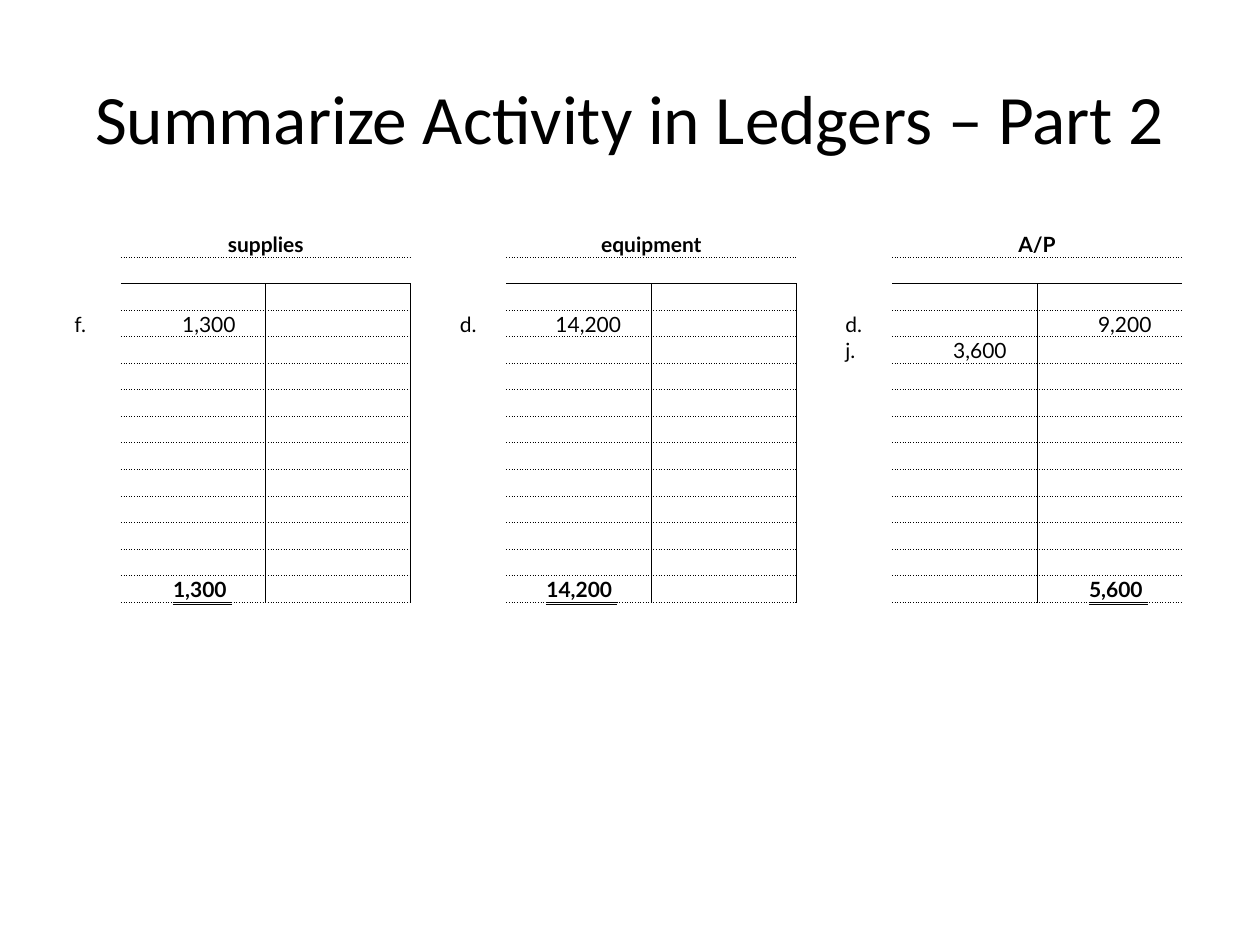
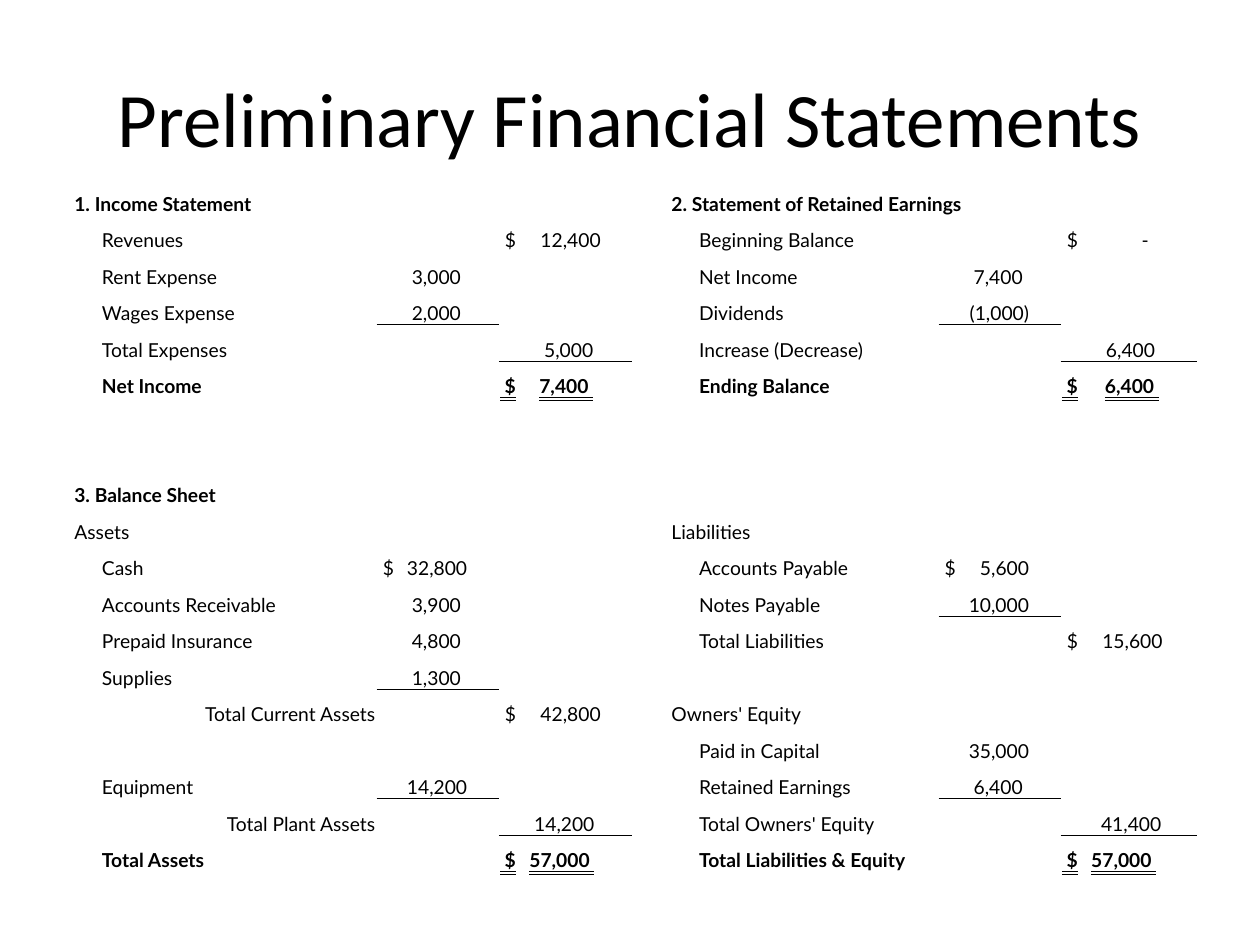
import lxml.etree
import pptx
import pptx.dml.color
import pptx.enum.text
import pptx.oxml.ns
import pptx.util

INK = "000000"
TITLE_FONT, BODY_FONT = "Calibri", "Lato"
PLAIN_TABLE = "{2D5ABB26-0587-4C30-8999-92F81FD0307C}"
SLIDE_WIDTH, SLIDE_HEIGHT = 10, 7.5
TITLE_BOX = (0.05, 0.04, 0.9, 1 / 6)
TABLE_LEFT = 0.58

TAG_WIDTH, SIDE_WIDTH, GAP_WIDTH = 0.38, 1.15, 0.38
ACCOUNT_COLUMNS = 4
LEDGER_ROWS = 14
ENTRY_STOP, TOTAL_STOP = 0.9, 0.87
ACCOUNTS = [
    ("supplies", [(3, "f.", 1, "1,300")], (1, "1,300")),
    ("equipment", [(3, "d.", 1, "14,200")], (1, "14,200")),
    ("A/P", [(3, "d.", 2, "9,200"), (4, "j.", 1, "3,600")], (2, "5,600")),
]

STATEMENT_WIDTHS = [0.22, 2.19, 0.97, 1.06, 0.3, 0.22, 1.91, 0.97, 1.08]
STATEMENT_ROWS = 19
LEFT_HEADINGS = [(0, "1. Income Statement", 2, True), (8, "3. Balance Sheet", 2, True),
                 (9, "Assets", 2, False)]
RIGHT_HEADINGS = [(0, "2. Statement of Retained Earnings", 3, True),
                  (9, "Liabilities", 2, False), (14, "Owners' Equity", 2, False)]
LEFT_LINES = [
    (1, "Revenues", "outer", " $\t12,400", 0.8),
    (2, "Rent Expense", "inner", "\t3,000", 0.66),
    (3, "Wages Expense", "inner rule", "\t2,000", 0.66),
    (4, "Total Expenses", "outer rule", "\t5,000", 0.74),
    (5, "Net Income", "outer total", " $\t7,400 ", 0.74),
    (10, "Cash", "inner", " $\t32,800", 0.71),
    (11, "Accounts Receivable", "inner", "\t3,900", 0.66),
    (12, "Prepaid Insurance", "inner", "\t4,800", 0.66),
    (13, "Supplies", "inner rule", "\t1,300", 0.66),
    (14, "Total Current Assets", "outer right", " $\t42,800", 0.8),
    (16, "Equipment", "inner rule", "\t14,200", 0.71),
    (17, "Total Plant Assets", "outer right rule", "\t14,200", 0.75),
    (18, "Total Assets", "outer total", " $\t57,000 ", 0.75),
]
RIGHT_LINES = [
    (1, "Beginning Balance", "outer", " $\t-", 0.69),
    (2, "Net Income", "inner", "\t7,400", 0.66),
    (3, "Dividends", "inner rule", "\t(1,000)", 0.71),
    (4, "Increase (Decrease)", "outer rule", "\t6,400", 0.74),
    (5, "Ending Balance", "outer total", " $\t6,400 ", 0.77),
    (10, "Accounts Payable", "inner", " $\t5,600", 0.71),
    (11, "Notes Payable", "inner rule", "\t10,000", 0.71),
    (12, "Total Liabilities", "outer", " $\t15,600", 0.8),
    (15, "Paid in Capital", "inner", "\t35,000", 0.71),
    (16, "Retained Earnings", "inner rule", "\t6,400", 0.66),
    (17, "Total Owners' Equity", "outer rule", "\t41,400", 0.79),
    (18, "Total Liabilities & Equity", "outer wide total", " $\t57,000 ", 0.75),
]


def colour(code):
    """Turn a hex string into a colour."""
    return pptx.dml.color.RGBColor.from_string(code)


def inches(value):
    """Turn inches into whole units."""
    return pptx.util.Inches(value)


def add_child(parent, tag, **attributes):
    """Append a drawing element to its parent."""
    return lxml.etree.SubElement(parent, pptx.oxml.ns.qn(tag), **attributes)


def style_font(font, name, size, bold=False):
    """Give a font its face, size, weight and ink."""
    font.name, font.size, font.bold = name, pptx.util.Pt(size), bold
    font.color.rgb = colour(INK)


def add_page(deck, title, size):
    """Add a title-only slide with a centred title."""
    page = deck.slides.add_slide(deck.slide_layouts[5])
    holder = page.shapes.title
    left, top, width, height = TITLE_BOX
    holder.left, holder.width = inches(left * SLIDE_WIDTH), inches(width * SLIDE_WIDTH)
    holder.top, holder.height = inches(top * SLIDE_HEIGHT), inches(height * SLIDE_HEIGHT)
    frame = holder.text_frame
    frame.text = title
    frame.auto_size = pptx.enum.text.MSO_AUTO_SIZE.NONE
    frame.vertical_anchor = pptx.enum.text.MSO_ANCHOR.MIDDLE
    para = frame.paragraphs[0]
    para.alignment = pptx.enum.text.PP_ALIGN.CENTER
    style_font(para.font, TITLE_FONT, size)
    return page


def add_grid(page, top, height, widths, row_count, size):
    """Add an unstyled table whose empty cells keep the small text size."""
    frame = page.shapes.add_table(row_count, len(widths), inches(TABLE_LEFT), inches(top),
                                  inches(sum(widths)), inches(height))
    table = frame.table
    table.first_row = table.horz_banding = False
    table._tbl.tblPr.find(pptx.oxml.ns.qn("a:tableStyleId")).text = PLAIN_TABLE
    for column, width in zip(table.columns, widths):
        column.width = inches(width)
    for row in table.rows:
        row.height = inches(height / row_count)
    for cell in table.iter_cells():
        cell.margin_left = cell.margin_right = cell.margin_top = inches(0.01)
        cell.margin_bottom = 0
        cell.vertical_anchor = pptx.enum.text.MSO_ANCHOR.BOTTOM
        cell.fill.background()
        para = cell.text_frame.paragraphs[0]
        style_font(para.font, BODY_FONT, size)
        add_child(para._p, "a:endParaRPr", sz=str(size * 100))
    return table


def write(cell, text, bold=False, align=None, stop=None, double=False):
    """Write a cell, with figures ending at a right tab stop."""
    para = cell.text_frame.paragraphs[0]
    para.add_run().text = text
    para.font.bold = bold
    para.alignment = align
    if double:
        para.font.underline = pptx.enum.text.MSO_TEXT_UNDERLINE_TYPE.DOUBLE_LINE
    if stop:
        stops = lxml.etree.Element(pptx.oxml.ns.qn("a:tabLst"))
        add_child(stops, "a:tab", pos=str(inches(stop)), algn="r")
        para._p.get_or_add_pPr().insert(0, stops)


def rule(cell, **edges):
    """Draw thin cell borders, given as side and dash in the order L, R, T, B."""
    properties = cell._tc.get_or_add_tcPr()
    for index, (side, dash) in enumerate(edges.items()):
        line = lxml.etree.Element(pptx.oxml.ns.qn("a:ln" + side), w=str(pptx.util.Pt(0.5)))
        add_child(add_child(line, "a:solidFill"), "a:srgbClr", val=INK)
        add_child(line, "a:prstDash", val=dash)
        properties.insert(index, line)


def add_account(table, first, name, entries, total):
    """Fill one T-account, starting at its tag column."""
    for side in (1, 2):
        stem = {"R" if side == 1 else "L": "solid"}
        for row in range(LEDGER_ROWS):
            cell = table.cell(row, first + side)
            if row == 0:
                rule(cell, B="sysDot")
            elif row == 1:
                rule(cell, T="sysDot", B="solid")
            else:
                rule(cell, **stem, T="solid" if row == 2 else "sysDot", B="sysDot")
    heading = table.cell(0, first + 1)
    heading.merge(table.cell(0, first + 2))
    write(heading, name, True, pptx.enum.text.PP_ALIGN.CENTER)
    for row, tag, side, amount in entries:
        write(table.cell(row, first), tag)
        write(table.cell(row, first + side), "\t" + amount, stop=ENTRY_STOP)
    side, amount = total
    write(table.cell(LEDGER_ROWS - 1, first + side), f"\t{amount} ", True,
          stop=TOTAL_STOP, double=True)


def add_statement(table, first, headings, lines):
    """Fill one half of the statements, starting at its indent column."""
    for row, text, span, bold in headings:
        cell = table.cell(row, first)
        cell.merge(table.cell(row, first + span - 1))
        write(cell, text, bold)
    for row, label, kind, amount, stop in lines:
        label_cell = table.cell(row, first + 1)
        amount_cell = table.cell(row, first + (2 if "inner" in kind else 3))
        if "wide" in kind:
            label_cell.merge(table.cell(row, first + 2))
        align = pptx.enum.text.PP_ALIGN.RIGHT if "right" in kind else None
        total = "total" in kind
        write(label_cell, label, total, align)
        write(amount_cell, amount, total, stop=stop, double=total)
        if "rule" in kind:
            rule(amount_cell, B="solid")


def add_ledgers(deck):
    """Build the slide of T-accounts."""
    page = add_page(deck, "Summarize Activity in Ledgers – Part 2", 39.6)
    account = [TAG_WIDTH, SIDE_WIDTH, SIDE_WIDTH, GAP_WIDTH]
    widths = (account * len(ACCOUNTS))[:-1]
    table = add_grid(page, 1.83, 2.95, widths, LEDGER_ROWS, 12)
    for index, details in enumerate(ACCOUNTS):
        add_account(table, index * ACCOUNT_COLUMNS, *details)


def add_statements(deck):
    """Build the slide of financial statements."""
    page = add_page(deck, "Preliminary Financial Statements", 44)
    table = add_grid(page, 1.42, 5.5, STATEMENT_WIDTHS, STATEMENT_ROWS, 11)
    add_statement(table, 0, LEFT_HEADINGS, LEFT_LINES)
    add_statement(table, 5, RIGHT_HEADINGS, RIGHT_LINES)


def main():
    """Build and save the deck."""
    deck = pptx.Presentation()
    deck.slide_width, deck.slide_height = inches(SLIDE_WIDTH), inches(SLIDE_HEIGHT)
    add_ledgers(deck)
    add_statements(deck)
    deck.save("out.pptx")


if __name__ == "__main__":
    main()
